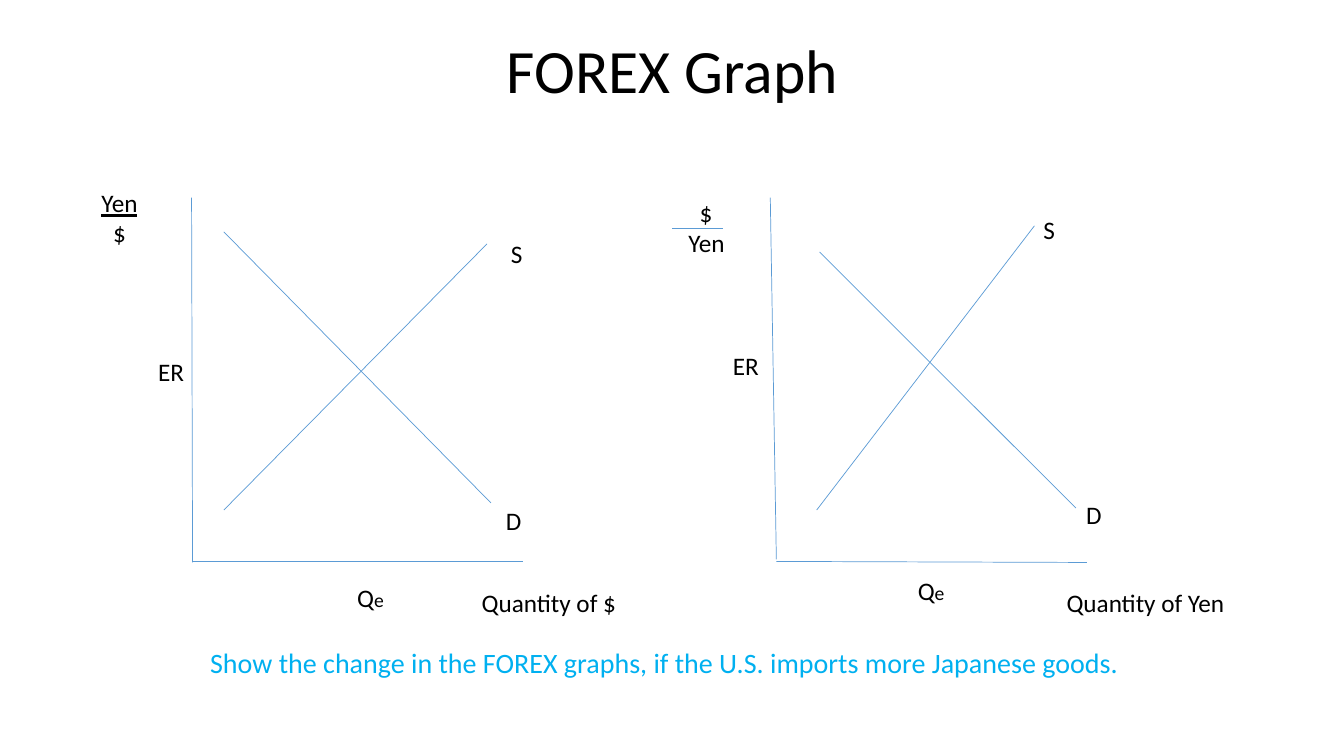
from dataclasses import dataclass

from lxml import etree
from pptx import Presentation
from pptx import util as u
from pptx.dml.color import RGBColor
from pptx.enum import shapes, text
from pptx.oxml.ns import qn

CENTER = text.PP_ALIGN.CENTER
LEFT = text.PP_ALIGN.LEFT


@dataclass(frozen=True)
class Theme:
    font: str = "Calibri"
    ink: str = "000000"
    curve: str = "5B9BD5"
    prompt: str = "00B0F0"
    title_size: int = 44
    prompt_size: int = 20
    label_size: int = 18
    subscript_size: int = 14
    line_width: float = 0.5


def add_run(p, content, *, font, size, color, underline=False):
    r = p.add_run()
    r.text = content
    r.font.name = font
    r.font.size = u.Pt(size)
    r.font.color.rgb = RGBColor.from_string(color)
    r.font.underline = underline
    return r


class SlideBuilder:
    def __init__(self, slide, theme):
        self.slide = slide
        self.theme = theme

    def line(self, start, end):
        points = [u.Inches(v) for v in (*start, *end)]
        sp = self.slide.shapes.add_connector(shapes.MSO_CONNECTOR.STRAIGHT, *points)
        sp.line.color.rgb = RGBColor.from_string(self.theme.curve)
        sp.line.width = u.Pt(self.theme.line_width)
        etree.SubElement(sp._element.spPr, qn("a:effectLst"))

    def frame(self, box, anchor=text.MSO_ANCHOR.TOP, wrap=True):
        sp = self.slide.shapes.add_textbox(*(u.Inches(v) for v in box))
        tf = sp.text_frame
        tf.word_wrap = wrap
        tf.vertical_anchor = anchor
        return tf

    def label(self, box, content, align=LEFT, size=None, color=None, **frame_format):
        tf = self.frame(box, **frame_format)
        p = tf.paragraphs[0]
        p.alignment = align
        add_run(p, content, font=self.theme.font, size=size or self.theme.label_size,
                color=color or self.theme.ink)
        return p

    def ratio(self, box, top, bottom, align=LEFT, underline=False, indents=(0, 0)):
        tf = self.frame(box)
        rows = ((top, underline, indents[0]), (bottom, False, indents[1]))
        for i, (content, underlined, indent) in enumerate(rows):
            p = tf.add_paragraph() if i else tf.paragraphs[0]
            p.alignment = align
            if indent:
                p._p.get_or_add_pPr().set("marL", str(u.Inches(indent)))
            add_run(p, content, font=self.theme.font, size=self.theme.label_size,
                    color=self.theme.ink, underline=underlined)

    def graph(self, lines, quantity, quantity_box, demand_box, supply_box,
              rate_box, equilibrium_box, demand_wrap=True):
        for start, end in lines:
            self.line(start, end)
        self.label(quantity_box, quantity)
        self.label(demand_box, "D", align=CENTER, wrap=demand_wrap)
        self.label(supply_box, "S", align=CENTER)
        self.label(rate_box, "ER")
        p = self.label(equilibrium_box, "Q", align=CENTER)
        add_run(p, "e", font=self.theme.font, size=self.theme.subscript_size,
                color=self.theme.ink)


def main():
    prs = Presentation()
    prs.slide_width = u.Inches(13.33)
    prs.slide_height = u.Inches(7.5)
    theme = Theme()
    s = SlideBuilder(prs.slides.add_slide(prs.slide_layouts[6]), theme)

    title = s.label((0.92, 0, 11.5, 1.45), "FOREX Graph", align=CENTER,
                    size=theme.title_size, anchor=text.MSO_ANCHOR.MIDDLE)
    title.line_spacing = 0.9

    s.graph(
        lines=[((1.9, 1.96), (1.91, 5.58)), ((1.91, 5.57), (5.19, 5.57)),
               ((2.22, 2.3), (4.87, 4.99)), ((2.22, 5.06), (4.83, 2.42))],
        quantity="Quantity of $",
        quantity_box=(4.68, 5.78, 1.67, 0.4),
        demand_box=(4.87, 4.96, 0.45, 0.4),
        supply_box=(4.89, 2.32, 0.47, 0.4),
        rate_box=(1.47, 3.49, 0.73, 0.4),
        equilibrium_box=(3.41, 5.73, 0.53, 0.4),
    )
    s.ratio((0.66, 1.81, 1.05, 0.71), "Yen", "$", align=CENTER, underline=True)

    s.graph(
        lines=[((7.64, 1.96), (7.7, 5.55)), ((7.7, 5.57), (10.78, 5.58)),
               ((8.13, 2.5), (10.67, 5.04)), ((8.1, 5.06), (10.26, 2.24))],
        quantity="Quantity of Yen",
        quantity_box=(10.48, 5.78, 1.94, 0.4),
        demand_box=(10.67, 4.9, 0.36, 0.4),
        supply_box=(10.17, 2.08, 0.47, 0.4),
        rate_box=(7.17, 3.43, 0.73, 0.4),
        equilibrium_box=(8.97, 5.66, 0.53, 0.4),
        demand_wrap=False,
    )
    s.ratio((6.67, 1.91, 0.87, 0.71), "$", "Yen", indents=(0.17, 0.06))
    s.line((6.67, 2.27), (7.17, 2.27))

    s.label((0.66, 6.35, 11.86, 0.44),
            "Show the change in the FOREX graphs, if the U.S. imports more Japanese goods.",
            align=CENTER, size=theme.prompt_size, color=theme.prompt)

    prs.save("out.pptx")


if __name__ == "__main__":
    main()
